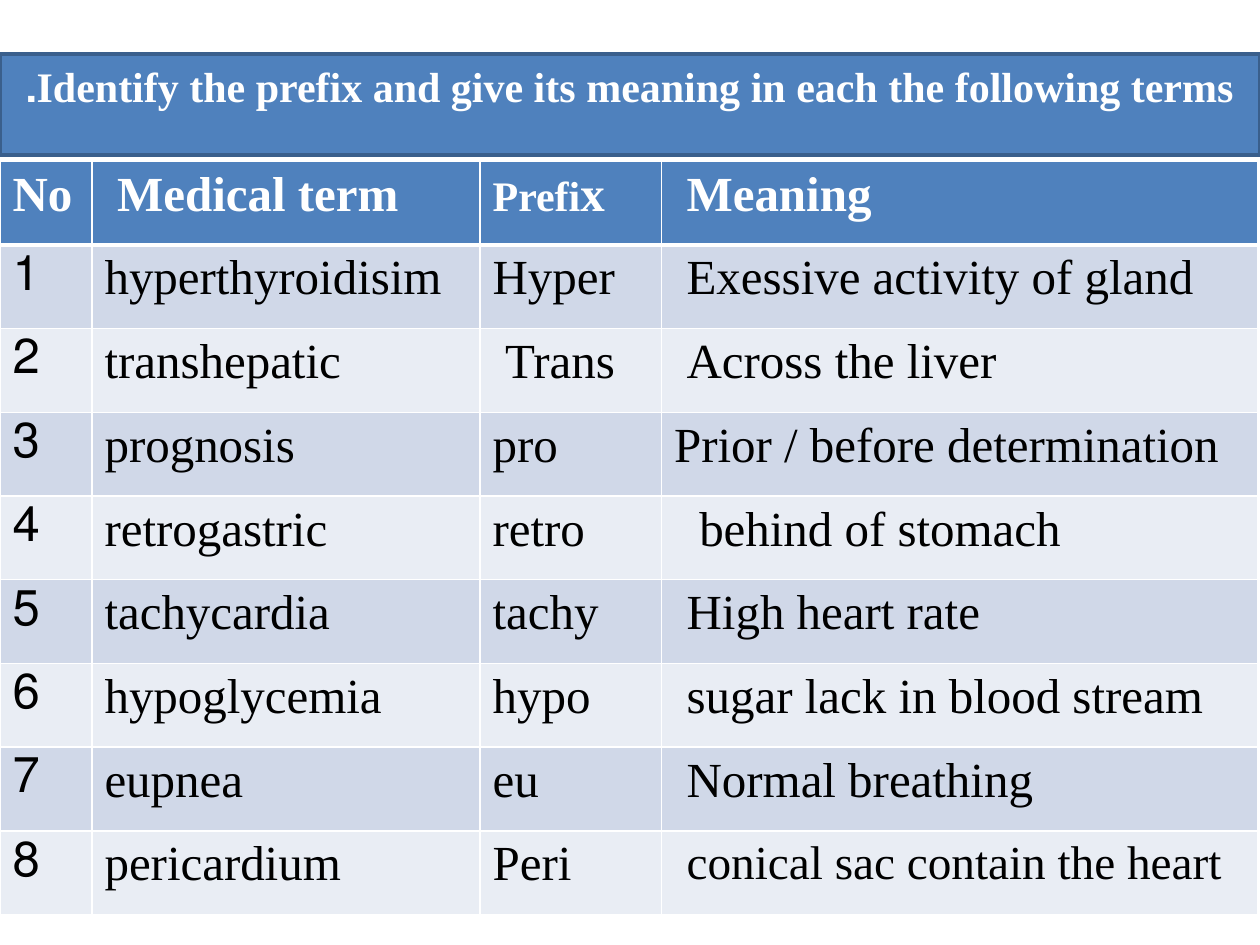
from lxml.etree import SubElement
from pptx import Presentation
from pptx.dml.color import RGBColor
from pptx.enum.text import MSO_ANCHOR, MSO_AUTO_SIZE, PP_ALIGN
from pptx.oxml.ns import qn
from pptx.util import Inches, Pt

FONT = "Times New Roman"
BLUE, WHITE, BLACK = "4F81BD", "FFFFFF", "000000"
BANDS = ("D0D8E8", "E9EDF4")
COLUMN_WIDTHS = (0.73, 3.08, 1.44, 4.73)
HEADER = ("No", "Medical term", (("Prefi", 24), ("x", 28)), "Meaning")
TERMS = (
    ("hyperthyroidisim", "Hyper", "Exessive activity of gland"),
    ("transhepatic", "Trans", "Across the liver"),
    ("prognosis", "pro", "Prior / before determination"),
    ("retrogastric", "retro", "behind of stomach"),
    ("tachycardia", "tachy", "High heart rate"),
    ("hypoglycemia", "hypo", "sugar lack in blood stream"),
    ("eupnea", "eu", "Normal breathing"),
    ("pericardium", "Peri", (("conical sac contain the heart", 27),)),
)
# Extra left margin by (row, column); other cells have none
INDENTS = {(row, 3): 0.1 for row in range(9)}
INDENTS.update({(0, 1): 0.1, (2, 2): 0.1, (3, 3): 0, (4, 3): 0.2})


def color(hex_text):
    return RGBColor.from_string(hex_text)


def write(frame, text, size=28, fill=BLACK, bold=False, align=PP_ALIGN.LEFT):
    """Write a right-to-left paragraph from a string or (text, size) pairs."""
    para = frame.paragraphs[0]
    para.alignment = align
    para._p.get_or_add_pPr().set("rtl", "1")
    pieces = ((text, size),) if isinstance(text, str) else text
    for piece, points in pieces:
        span = para.add_run()
        span.text = piece
        span.font.name = FONT
        span.font.size = Pt(points)
        span.font.bold = bold
        span.font.color.rgb = color(fill)


def set_borders(cell, top, bottom):
    props = cell._tc.get_or_add_tcPr()
    for side, width in (("L", 1), ("R", 1), ("T", top), ("B", bottom)):
        line = SubElement(props, qn(f"a:ln{side}"), w=str(Pt(width)))
        fill = SubElement(line, qn("a:solidFill"))
        SubElement(fill, qn("a:srgbClr"), val=WHITE)


def place_title(page, left, top, width, height):
    title = page.shapes.title
    title.left, title.top = Inches(left), Inches(top)
    title.width, title.height = Inches(width), Inches(height)
    title.fill.solid()
    title.fill.fore_color.rgb = color(BLUE)
    title.line.color.rgb = color("3A5F8C")
    title.line.width = Pt(2)
    frame = title.text_frame
    frame.word_wrap = True
    frame.auto_size = MSO_AUTO_SIZE.NONE
    frame.vertical_anchor = MSO_ANCHOR.TOP
    write(frame, "Identify the prefix and give its meaning in each the following terms.",
          size=24, fill=WHITE, bold=True, align=PP_ALIGN.CENTER)


def place_terms_table(page, left, top, width, height):
    rows = [HEADER] + [(str(number), *term) for number, term in enumerate(TERMS, 1)]
    table = page.shapes.add_table(len(rows), len(HEADER), Inches(left), Inches(top),
                                  Inches(width), Inches(height)).table
    for column, column_width in zip(table.columns, COLUMN_WIDTHS):
        column.width = Inches(column_width)
    for r, row in enumerate(rows):
        is_header = r == 0
        for c, text in enumerate(row):
            cell = table.cell(r, c)
            set_borders(cell, top=3 if r == 1 else 1, bottom=3 if is_header else 1)
            cell.fill.solid()
            cell.fill.fore_color.rgb = color(BLUE if is_header else BANDS[(r - 1) % 2])
            cell.margin_left = Inches(0.1 + INDENTS.get((r, c), 0))
            write(cell.text_frame, text, fill=WHITE if is_header else BLACK, bold=is_header)


def main():
    deck = Presentation()
    deck.slide_width, deck.slide_height = Inches(10), Inches(7.5)
    page = deck.slides.add_slide(deck.slide_layouts[5])
    place_title(page, 0, 0.43, 10, 0.8)
    place_terms_table(page, 0, 1.28, 9.98, 5.98)
    deck.save("out.pptx")


if __name__ == "__main__":
    main()
